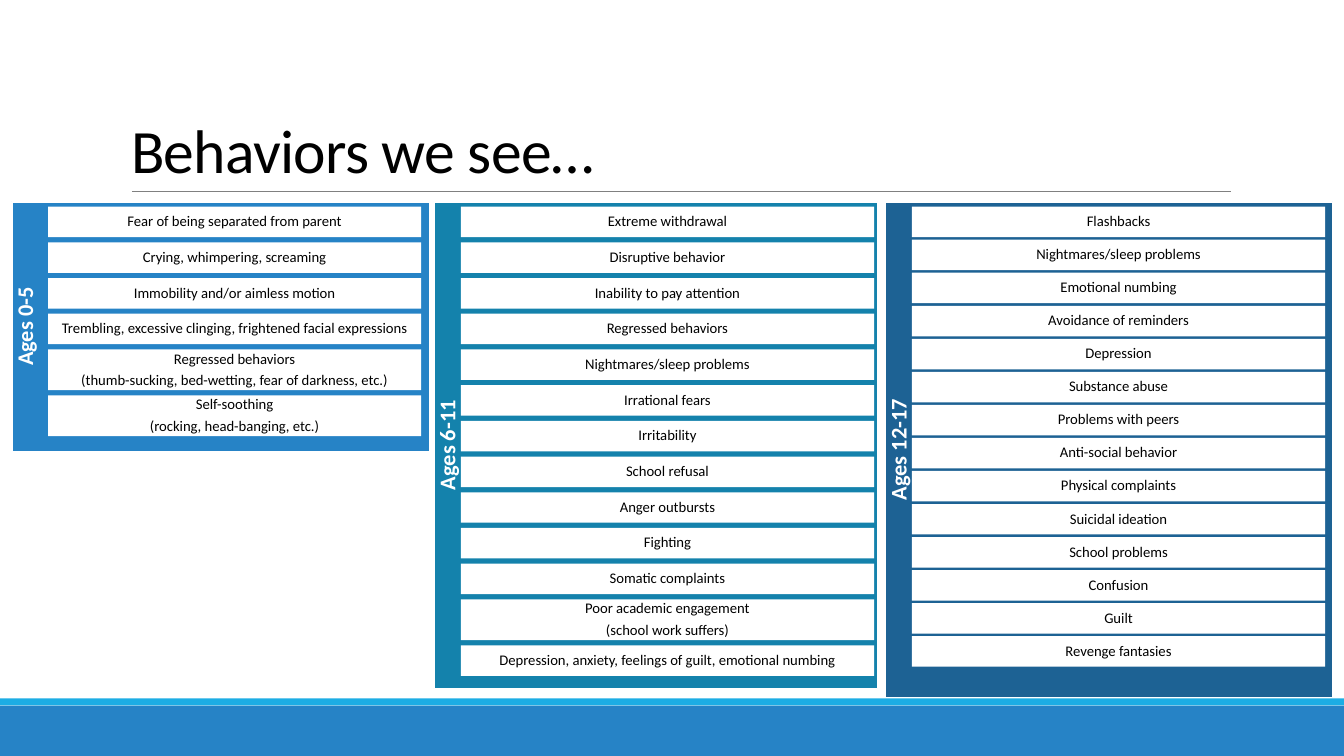
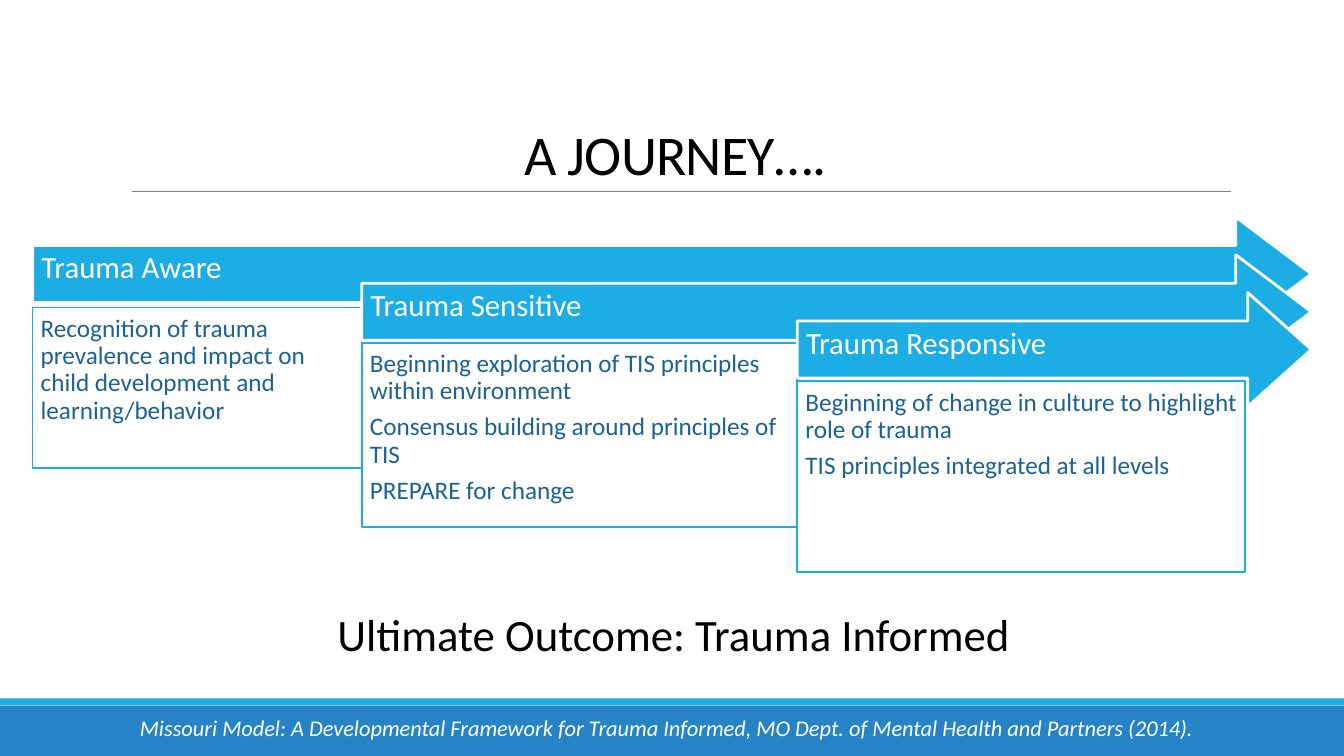
from lxml import etree
from pptx import Presentation
from pptx.dml.color import RGBColor
from pptx.enum.shapes import MSO_CONNECTOR, MSO_SHAPE
from pptx.enum.text import MSO_ANCHOR, MSO_AUTO_SIZE, PP_ALIGN
from pptx.oxml.ns import qn
from pptx.util import Pt

RECTANGLE, RIGHT_ARROW = MSO_SHAPE.RECTANGLE, MSO_SHAPE.RIGHT_ARROW
STRAIGHT = MSO_CONNECTOR.STRAIGHT
TOP, MIDDLE, BOTTOM = MSO_ANCHOR.TOP, MSO_ANCHOR.MIDDLE, MSO_ANCHOR.BOTTOM
LEFT, CENTER = PP_ALIGN.LEFT, PP_ALIGN.CENTER
NO_AUTOFIT = MSO_AUTO_SIZE.NONE

WHITE = RGBColor(0xFF, 0xFF, 0xFF)
BLACK = RGBColor(0x00, 0x00, 0x00)
GRAY = RGBColor(0x80, 0x80, 0x80)
SKY = RGBColor(0x1C, 0xAD, 0xE4)
BLUE = RGBColor(0x26, 0x83, 0xC6)
TEAL = RGBColor(0x14, 0x82, 0xAC)
NAVY = RGBColor(0x1D, 0x62, 0x94)

FONT = "Calibri"
SLIDE_W, SLIDE_H = 960, 540
TITLE_ONLY = 5


def add_block(slide, kind, left, top, width, height, fill, line=None, line_width=1.25):
    block = slide.shapes.add_shape(kind, Pt(left), Pt(top), Pt(width), Pt(height))
    block.shadow.inherit = False
    block.fill.solid()
    block.fill.fore_color.rgb = fill
    if line is None:
        block.line.fill.background()
    else:
        block.line.color.rgb = line
        block.line.width = Pt(line_width)
    return block


def write(shape, lines, size, color, align=CENTER, anchor=MIDDLE, margins=(7.2, 3.6, 7.2, 3.6),
          spacing=0.9, after=0.35, bold=False, italic=False):
    """Fill a shape with paragraphs; after is the gap below each, as a share of the size."""
    frame = shape.text_frame
    frame.word_wrap = True
    frame.auto_size = NO_AUTOFIT
    frame.vertical_anchor = anchor
    (frame.margin_left, frame.margin_top,
     frame.margin_right, frame.margin_bottom) = [Pt(margin) for margin in margins]
    frame.text = "\n".join(lines)
    for paragraph in frame.paragraphs:
        paragraph.alignment = align
        paragraph.line_spacing = spacing
        paragraph.space_before = Pt(0)
        paragraph.space_after = Pt(round(after * size, 1))
        for run in paragraph.runs:
            run.font.name = FONT
            run.font.size = Pt(size)
            run.font.color.rgb = color
            run.font.bold = bold
            run.font.italic = italic


prs = Presentation()
prs.slide_width, prs.slide_height = Pt(SLIDE_W), Pt(SLIDE_H)
layout = prs.slide_layouts[TITLE_ONLY]

# Titles
for heading, size, align in [("Behaviors we see…", 44, LEFT), ("A JOURNEY….", 40, CENTER)]:
    title = prs.slides.add_slide(layout).shapes.title
    title.left, title.top, title.width, title.height = Pt(86.4), Pt(22.3), Pt(792), Pt(114.5)
    write(title, [heading], size, BLACK, align, BOTTOM, spacing=0.85, after=0)
    for run in title.text_frame.paragraphs[0].runs:
        run.font._element.set("spc", "-50")
behaviors, journey = prs.slides

# Bands and title rule, moved to the layout that both slides share
footer_band = add_block(behaviors, RECTANGLE, 0, 504, SLIDE_W, 36, BLUE)
accent_band = add_block(behaviors, RECTANGLE, 0, 498.8, SLIDE_W, 5.04, SKY)
title_rule = behaviors.shapes.add_connector(STRAIGHT, Pt(94.3), Pt(136.8), Pt(879), Pt(136.8))
title_rule.line.color.rgb = GRAY
title_rule.line.width = Pt(0.5)
etree.SubElement(title_rule.element.spPr, qn("a:effectLst"))
for shared in (footer_band, accent_band, title_rule):
    layout.shapes.element.append(shared.element)

# Slide 1: one panel of behaviors per age group
PANEL_TOP, CARD_TOP = 144, 147.6
CARD_HEIGHTS = {1: 21.8, 2: 29.1}
CARD_MARGINS = (2, 1.5, 2, 1.5)
# label, color, panel left, width, height, card left, width, gap, behaviors
age_groups = [
    ("Ages 0-5", BLUE, 8.3, 298.8, 178.6, 34.4, 266.4, 3.7, [
        "Fear of being separated from parent",
        "Crying, whimpering, screaming",
        "Immobility and/or aimless motion",
        "Trembling, excessive clinging, frightened facial expressions",
        "Regressed behaviors\n(thumb-sucking, bed-wetting, fear of darkness, etc.)",
        "Self-soothing\n(rocking, head-banging, etc.)",
    ]),
    ("Ages 6-11", TEAL, 310, 316.8, 347.8, 329.2, 295.2, 3.7, [
        "Extreme withdrawal",
        "Disruptive behavior",
        "Inability to pay attention",
        "Regressed behaviors",
        "Nightmares/sleep problems",
        "Irrational fears",
        "Irritability",
        "School refusal",
        "Anger outbursts",
        "Fighting",
        "Somatic complaints",
        "Poor academic engagement\n(school work suffers)",
        "Depression, anxiety, feelings of guilt, emotional numbing",
    ]),
    ("Ages 12-17", NAVY, 632.2, 319.7, 354.2, 651.4, 295.2, 1.8, [
        "Flashbacks",
        "Nightmares/sleep problems",
        "Emotional numbing",
        "Avoidance of reminders",
        "Depression",
        "Substance abuse",
        "Problems with peers",
        "Anti-social behavior",
        "Physical complaints",
        "Suicidal ideation",
        "School problems",
        "Confusion",
        "Guilt",
        "Revenge fantasies",
    ]),
]
for label, color, left, width, height, card_left, card_width, gap, entries in age_groups:
    # The panel is turned a quarter left, so its sides swap around a fixed centre
    shift = (width - height) / 2
    panel = add_block(behaviors, RECTANGLE, left + shift, PANEL_TOP - shift, height, width,
                      color, WHITE)
    panel.rotation = 270
    write(panel, [label], 16, WHITE, anchor=TOP, margins=CARD_MARGINS, bold=True)
    card_top = CARD_TOP
    for entry in entries:
        lines = entry.split("\n")
        card_height = CARD_HEIGHTS[len(lines)]
        card = add_block(behaviors, RECTANGLE, card_left, card_top, card_width, card_height, WHITE)
        write(card, lines, 10.5, BLACK, margins=CARD_MARGINS)
        card_top += card_height + gap

# Slide 2: three overlapping stages
ARROW_RIGHT, ARROW_HEIGHT = 936.7, 81.4
# name, left, arrow top, head length, details top, width, height, details
stages = [
    ("Trauma Aware", 23.3, 155, 54, 219.6, 235, 114.5, [
        "Recognition of trauma prevalence and impact on child development and learning/behavior",
    ]),
    ("Trauma Sensitive", 258.4, 182, 54, 244.8, 311, 131.5, [
        "Beginning exploration of TIS principles within environment",
        "Consensus building around principles of TIS",
        "PREPARE for change",
    ]),
    ("Trauma Responsive", 569.5, 209, 45.4, 272.4, 320, 136.2, [
        "Beginning of change in culture to highlight role of trauma",
        "TIS principles integrated at all levels",
    ]),
]
for name, left, arrow_top, head, details_top, width, height, details in stages:
    arrow = add_block(journey, RIGHT_ARROW, left, arrow_top, ARROW_RIGHT - left, ARROW_HEIGHT,
                      SKY, WHITE, 2)
    arrow.adjustments[0] = 0.5
    arrow.adjustments[1] = head / ARROW_HEIGHT
    write(arrow, [name], 22, WHITE, LEFT, margins=(6.3, 0, 0, 7.2))
    details_box = add_block(journey, RECTANGLE, left, details_top, width, height, WHITE, SKY)
    write(details_box, details, 18, NAVY, LEFT, TOP, margins=(5.8, 5.8, 5.8, 5.8))

citation = journey.shapes.add_textbox(Pt(92.9), Pt(506.9), Pt(774.7), Pt(26.6))
write(citation, ["Missouri Model: A Developmental Framework for Trauma Informed, "
                 "MO Dept. of Mental Health and Partners (2014)."],
      16, WHITE, LEFT, TOP, spacing=1.0, after=0, italic=True)
citation.text_frame.word_wrap = False

outcome = add_block(journey, RECTANGLE, 24.5, 430.6, 913.7, 43.9, WHITE, WHITE)
write(outcome, ["Ultimate Outcome: Trauma Informed"], 32, BLACK, spacing=1.0, after=0)

prs.save("out.pptx")
